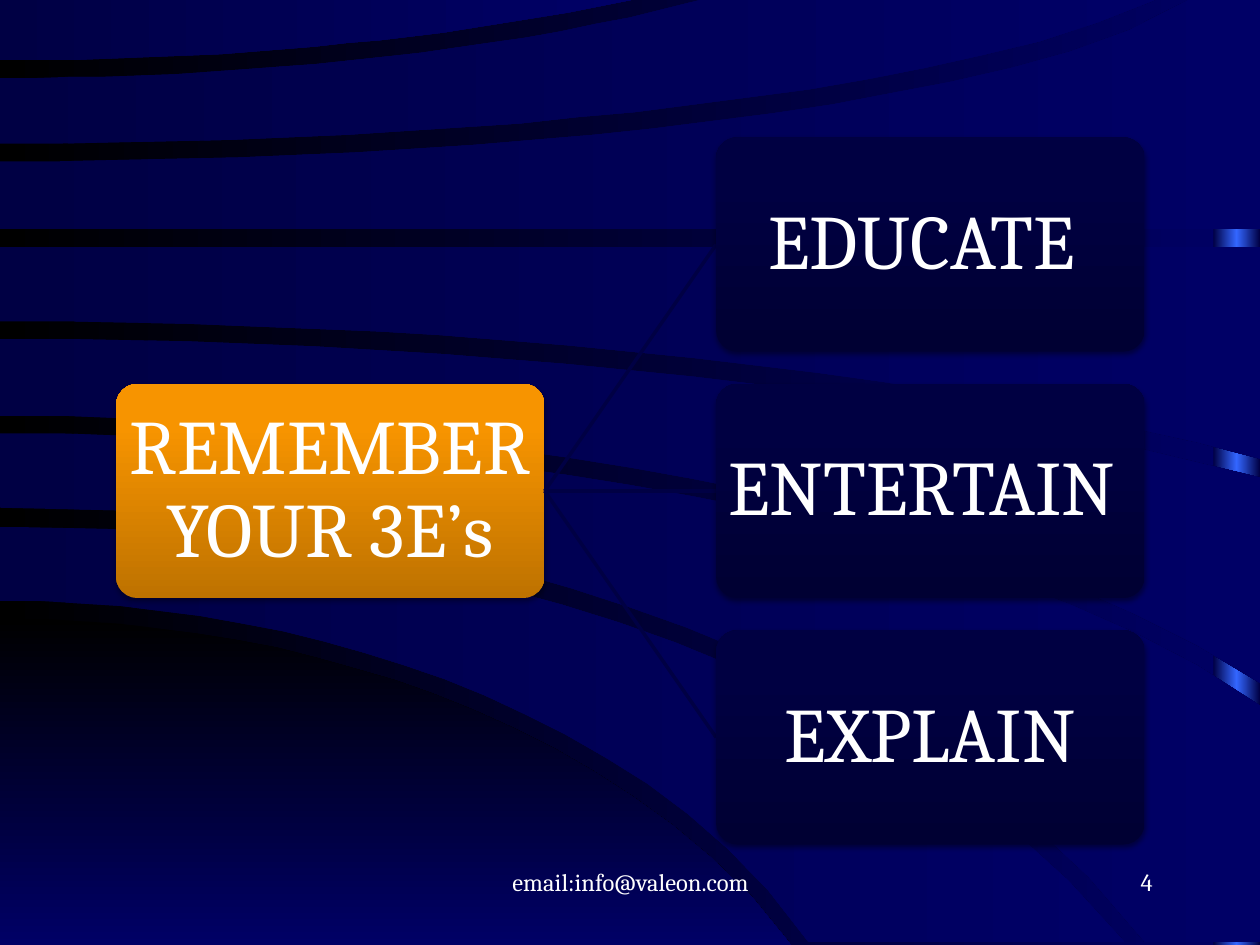
from math import copysign, sqrt

from lxml.etree import SubElement
from pptx import Presentation
from pptx.dml.color import RGBColor
from pptx.enum.shapes import MSO_CONNECTOR as Link, MSO_SHAPE as Preset
from pptx.enum.text import MSO_ANCHOR as Anchor, PP_ALIGN as Align
from pptx.oxml.ns import qn
from pptx.util import Cm, Pt

PAGE_WIDTH, PAGE_HEIGHT = 25.4, 19.05
NODE_WIDTH, NODE_HEIGHT = 8.64, 4.32
GRID = Cm(2.54) / 100
STEPS = 20
FONT, WHITE = "Cambria", "FFFFFF"
NAVY = [(0, "000044"), (100, "000066")]
NIGHT = [(0, "000000"), (100, "000066")]
GLOW = [(0, "000044"), (50, "3366FF"), (100, "000044")]
ORANGE = [(0, "BE7200"), (80, "F79400"), (100, "F89500")]
DARK = [(0, "000033"), (80, "000042"), (100, "000042")]

HILL = [(491, (386, 568), (628, 750)), (750, None, (628, 750))]
BANDS = [
    [(418, (472, 488), (893, 748)), (477, (342, 535), (642, 748))],
    [(344, (570, 398), (1000, 560)), (403, (521, 489), (909, 748))],
    [(269, (566, 301), (1000, 379)), (330, (560, 382), (1000, 542))],
    [(196, None, (1000, 196)), (255, (552, 284), (1000, 364))],
    [(128, (597, 92), (943, 0)), (182, None, (1000, 182))],
    [(62, (308, 45), (556, 0)), (114, (577, 80), (917, 0))],
    [(0, None, (501, 0)), (48, (289, 33), (501, 0))],
]


def color(value):
    return RGBColor.from_string(value)


def paint(fill, element, stops, angle):
    fill.gradient()
    gradient = element.find(".//" + qn("a:gradFill"))
    stop_list = gradient.find(qn("a:gsLst"))
    for old in list(stop_list):
        stop_list.remove(old)
    for position, value in stops:
        stop = SubElement(stop_list, qn("a:gs"), pos=str(position * 1000))
        SubElement(stop, qn("a:srgbClr"), val=value)
    gradient.find(qn("a:lin")).set("ang", str(angle * 60000))


def finish(shape, stops, angle):
    shape.shadow.inherit = False
    shape.line.fill.background()
    paint(shape.fill, shape.element, stops, angle)


def write(shape, text, size, align, anchor=Anchor.TOP):
    frame = shape.text_frame
    frame.word_wrap = True
    frame.vertical_anchor = anchor
    frame.text = text
    para = frame.paragraphs[0]
    para.alignment = align
    font = para.runs[0].font
    font.name, font.size = FONT, Pt(size)
    font.color.rgb = color(WHITE)
    return frame


def trace_edge(start, middle, end):
    if middle is None:
        return [(0, start), end]
    (mid_x, mid_y), (end_x, end_y) = middle, end
    mid_rise, end_rise = abs(mid_y - start), abs(end_y - start)
    ratio = (end_x / mid_x) ** 2
    radius = (end_rise ** 2 - ratio * mid_rise ** 2) / (2 * (end_rise - ratio * mid_rise))
    bend = (2 * radius * end_rise - end_rise ** 2) / end_x ** 2
    points = []
    for step in range(STEPS + 1):
        x = end_x * step / STEPS
        rise = radius - sqrt(max(radius ** 2 - bend * x ** 2, 0))
        points.append((x, start + copysign(rise, end_y - start)))
    return points


def add_band(page, upper, lower, stops, angle):
    upper_end, lower_end = upper[-1], lower[-1]
    corner = (max(upper_end[0], lower_end[0]), min(upper_end, lower_end)[1])
    points = trace_edge(*upper) + [corner] + trace_edge(*lower)[::-1]
    builder = page.shapes.build_freeform(*points[0], scale=GRID)
    builder.add_line_segments(points[1:], close=True)
    finish(builder.convert_to_shape(), stops, angle)


def add_backdrop(page):
    paint(page.background.fill, page.element, NIGHT, 0)
    strip_width = 0.94
    strip = page.shapes.add_shape(Preset.RECTANGLE, Cm(PAGE_WIDTH - strip_width), 0,
                                  Cm(strip_width), Cm(PAGE_HEIGHT))
    finish(strip, GLOW, 0)
    add_band(page, *HILL, NIGHT, 90)
    for band in BANDS:
        add_band(page, *band, NAVY, 0)


def cast_shadow(shape, opacity):
    effects = shape.element.spPr.find(qn("a:effectLst"))
    shadow = SubElement(effects, qn("a:outerShdw"), blurRad=str(Pt(3.1)),
                        dist=str(Pt(1.7)), dir="5400000", rotWithShape="0")
    shade = SubElement(shadow, qn("a:srgbClr"), val="000000")
    SubElement(shade, qn("a:alpha"), val=str(opacity * 1000))


def add_node(page, left, top, text, stops, opacity):
    node = page.shapes.add_shape(Preset.ROUNDED_RECTANGLE, Cm(left), Cm(top),
                                 Cm(NODE_WIDTH), Cm(NODE_HEIGHT))
    node.adjustments[0] = 0.1
    finish(node, stops, 270)
    cast_shadow(node, opacity)
    frame = write(node, text, 44, Align.CENTER, Anchor.MIDDLE)
    frame.margin_left = frame.margin_right = Cm(0.08)
    frame.margin_top = frame.margin_bottom = Cm(0.08)
    frame.paragraphs[0].line_spacing = 0.9


def add_branch(page, start, end):
    branch = page.shapes.add_connector(Link.STRAIGHT, *map(Cm, start + end))
    branch.line.color.rgb = color("000044")
    branch.line.width = Pt(2)
    SubElement(branch.element.spPr, qn("a:effectLst"))


def add_tree(page, left, top, root, children):
    step = NODE_HEIGHT * 1.15
    child_left = left + NODE_WIDTH * 1.4
    root_top = top + step * (len(children) - 1) / 2
    half = NODE_HEIGHT / 2
    add_node(page, left, root_top, root, ORANGE, 35)
    for index, child in enumerate(children):
        child_top = top + index * step
        add_branch(page, (left + NODE_WIDTH, root_top + half), (child_left, child_top + half))
        add_node(page, child_left, child_top, child, DARK, 38)


def add_footer(page, top):
    for left, width, text, align in [
        (8.69, 8.05, "email:info@valeon.com", Align.CENTER),
        (18.21, 5.28, "4", Align.RIGHT),
    ]:
        box = page.shapes.add_textbox(Cm(left), Cm(top), Cm(width), Cm(1.27))
        write(box, text, 14, align)


def main():
    deck = Presentation()
    deck.slide_width, deck.slide_height = Cm(PAGE_WIDTH), Cm(PAGE_HEIGHT)
    page = deck.slides.add_slide(deck.slide_layouts[6])
    add_backdrop(page)
    add_tree(page, 2.34, 2.77, "REMEMBER YOUR 3E’s", ["EDUCATE ", "ENTERTAIN ", "EXPLAIN"])
    add_footer(page, 17.35)
    deck.save("out.pptx")


if __name__ == "__main__":
    main()
